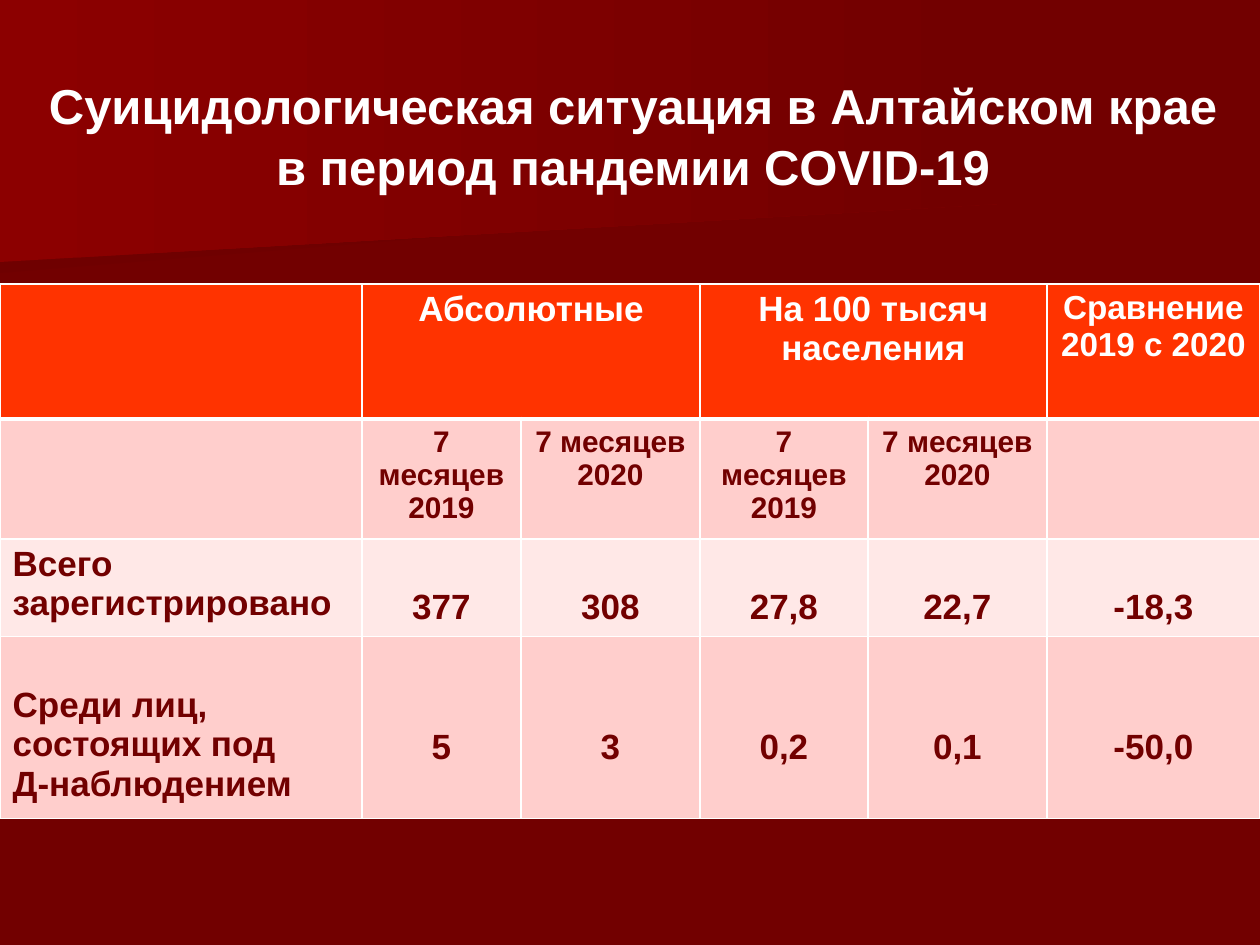
from lxml import etree
from pptx import Presentation
from pptx.dml.color import RGBColor
from pptx.enum.text import PP_ALIGN as AL
from pptx.oxml.ns import qn
from pptx.util import Pt

PX = 914400 // 126
WHITE = RGBColor(0xFF, 0xFF, 0xFF)
DARK = RGBColor(0x72, 0x00, 0x00)
SHADE = RGBColor(0x6F, 0x00, 0x00)
RED = RGBColor(0x8C, 0x00, 0x00)
ORANGE = RGBColor(0xFF, 0x33, 0x00)
PINK = RGBColor(0xFF, 0xCE, 0xCC)
PALE = RGBColor(0xFF, 0xE8, 0xE7)


def set_font(p, size, color, align):
    p.alignment = align
    p.font.name, p.font.size, p.font.bold = "Arial", Pt(size), True
    p.font.color.rgb = color


def add_border(cell, side, width):
    ln = etree.SubElement(cell._tc.get_or_add_tcPr(), qn(f"a:ln{side}"), w=str(Pt(width)))
    fill = etree.SubElement(ln, qn("a:solidFill"))
    etree.SubElement(fill, qn("a:srgbClr"), val=str(WHITE))


prs = Presentation()
prs.slide_width, prs.slide_height = 1260 * PX, 945 * PX
s = prs.slides.add_slide(prs.slide_layouts[6])
s.background.fill.solid()
s.background.fill.fore_color.rgb = DARK

# Slanted bands behind the title
bands = [
    ([(981, 193), (0, 273), (0, 127), (982, 127)], SHADE),
    ([(998, 204), (0, 262), (0, 0), (998, 0)], RED),
]
for points, color in bands:
    fb = s.shapes.build_freeform(*points[0], scale=PX)
    fb.add_line_segments(points[1:], close=True)
    sp = fb.convert_to_shape()
    sp.shadow.inherit = False
    sp.line.fill.background()
    sp.fill.gradient()
    sp.fill.gradient_angle = 0
    for stop, stop_color, position in zip(sp.fill.gradient_stops, (color, DARK), (0, 1)):
        stop.color.rgb = stop_color
        stop.position = position

# Title
tf = s.shapes.add_textbox(25 * PX, 66 * PX, 1216 * PX, 131 * PX).text_frame
tf.word_wrap = True
p = tf.paragraphs[0]
p.text = "Суицидологическая ситуация в Алтайском крае в период пандемии COVID-19"
p.line_spacing = 1.05
set_font(p, 28, WHITE, AL.CENTER)

# Table: one text per cell, "" where the cell is empty or merged
col_widths = [362, 159, 179, 168, 179, 213]
months = ["7 месяцев 2019", "7 месяцев 2020"]
# height, fill, text colour, size, top margin of label, of the other cells, texts
rows = [
    (135, ORANGE, WHITE, 20, 6, 6,
     ["", "Абсолютные", "", "На 100 тысяч населения", "", "Сравнение 2019 с 2020"]),
    (120, PINK, DARK, 17, 6, 6, ["", *months, *months, ""]),
    (96, PALE, DARK, 20, 6, 49,
     ["Всего зарегистрировано", "377", "308", "27,8", "22,7", "-18,3"]),
    (181, PINK, DARK, 20, 50, 92,
     ["Среди лиц, состоящих под\nД-наблюдением", "5", "3", "0,2", "0,1", "-50,0"]),
]
table = s.shapes.add_table(len(rows), len(col_widths), 0, 284 * PX, 1260 * PX, 532 * PX).table
for col, width in zip(table.columns, col_widths):
    col.width = width * PX

for i, (height, fill, color, size, label_top, value_top, texts) in enumerate(rows):
    table.rows[i].height = height * PX
    for j, text in enumerate(texts):
        cell = table.cell(i, j)
        for side in "LRTB":
            under_header = (i, side) in ((0, "B"), (1, "T"))
            add_border(cell, side, 3 if under_header else 1)
        cell.fill.solid()
        cell.fill.fore_color.rgb = fill
        cell.margin_top = (value_top if j else label_top) * PX
        cell.text = text
        header_size = 19 if (i, j) == (0, 5) else size
        for p in cell.text_frame.paragraphs:
            set_font(p, header_size, color, AL.CENTER if j else AL.LEFT)

for j in (1, 3):
    table.cell(0, j).merge(table.cell(0, j + 1))

prs.save("out.pptx")
